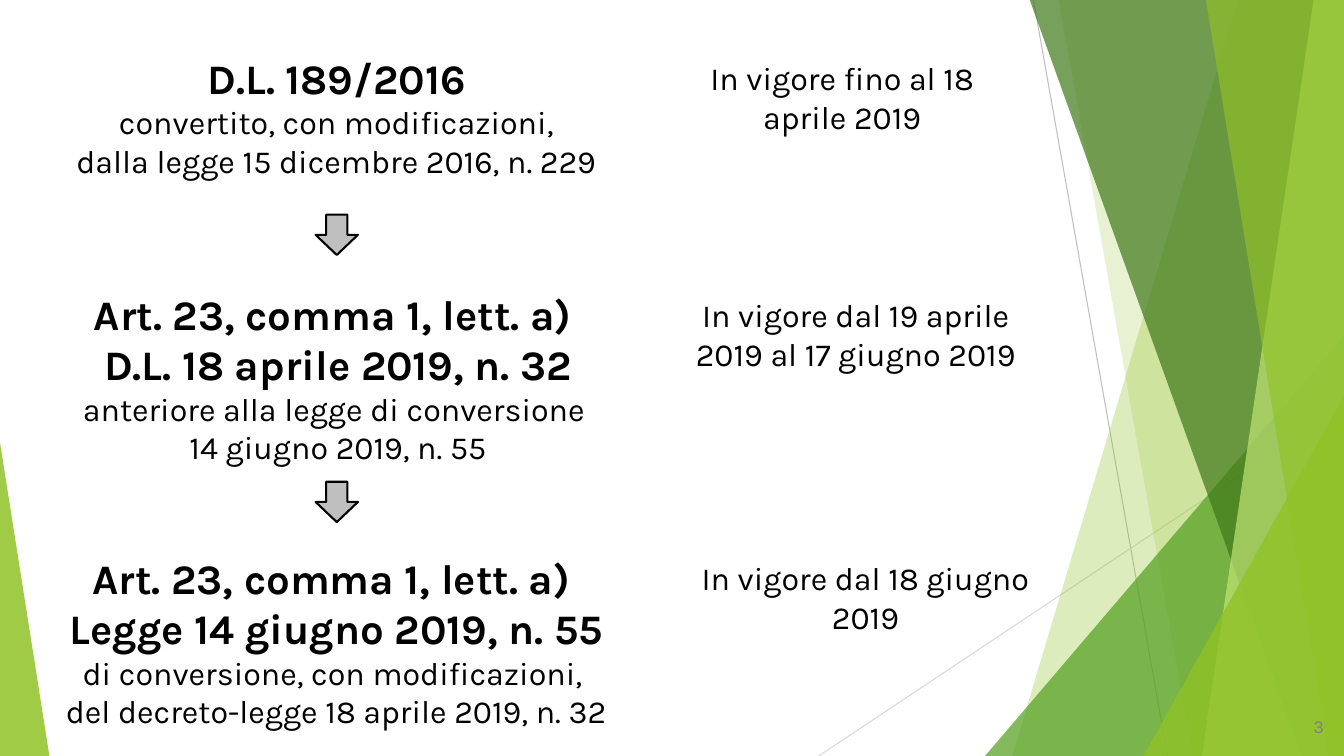
from lxml.etree import SubElement
from pptx import Presentation
from pptx.dml.color import RGBColor
from pptx.enum.shapes import MSO_CONNECTOR, MSO_SHAPE
from pptx.enum.text import MSO_ANCHOR, MSO_AUTO_SIZE, PP_ALIGN
from pptx.oxml.ns import qn
from pptx.util import Emu, Pt

PX = 9144  # one px is a hundredth of an inch
WIDTH, HEIGHT = 1333, 750
FONT = "Karla"
HEADING, BODY, NUMBER = 30, 23, 13

BLACK = RGBColor(0x00, 0x00, 0x00)
GREY = RGBColor(0x80, 0x80, 0x80)
SILVER = RGBColor(0xBF, 0xBF, 0xBF)
PALE_GREY = RGBColor(0xD9, 0xD9, 0xD9)
LIME = RGBColor(0x90, 0xC2, 0x26)
GREEN = RGBColor(0x54, 0xA0, 0x21)
DARK_GREEN = RGBColor(0x3F, 0x78, 0x19)
LIGHT_LIME = RGBColor(0xC0, 0xE4, 0x74)

# start, end, colour
RAYS = [
    ((1025, 0), (1158, 750), SILVER),
    ((1333, 403), (812, 750), PALE_GREY),
]

# Back to front: a band gives its top and bottom left corners and runs to the
# right edge; a wedge gives its left, top, width and apex position.
FACETS = [
    ("band", (1228, 1004), LIME, 30),
    ("band", (1050, 1183), LIME, 20),
    ("wedge", (977, 333, 356, 1), GREEN, 72),
    ("band", (1021, 1291), DARK_GREEN, 70),
    ("band", (1303, 1192), LIGHT_LIME, 70),
    ("band", (1196, 1318), LIME, 65),
    ("wedge", (1134, 393, 199, 1), LIME, 80),
    ("wedge", (0, 439, 49, 0), LIME, 85),
]

# box, heading lines, body lines
LAWS = [
    ((0, 47, 668, 138),
     ["D.L. 189/2016"],
     [" convertito, con modificazioni, ", "dalla legge 15 dicembre 2016, n. 229"]),
    ((0, 281, 671, 188),
     ["Art. 23, comma 1, lett. a) ", "D.L. 18 aprile 2019, n. 32"],
     ["anteriore alla legge di conversione ", "14 giugno 2019, n. 55"]),
    ((0, 543, 668, 188),
     ["Art. 23, comma 1, lett. a) ", "Legge 14 giugno 2019, n. 55"],
     ["di conversione, con modificazioni, ", "del decreto-legge 18 aprile 2019, n. 32"]),
]

PERIODS = [
    ((667, 53, 337, 88), "In vigore fino al 18 aprile 2019"),
    ((667, 288, 364, 88), "In vigore dal 19 aprile 2019 al 17 giugno 2019"),
    ((671, 549, 375, 88), "In vigore dal 18 giugno 2019"),
]

ARROW_LEFT, ARROW_WIDTH, ARROW_HEIGHT = 314, 40, 42
ARROW_TOPS = [212, 477]

PAGE = ((1248, 700, 75, 40), "3")


def emu(*lengths):
    return [Emu(length * PX) for length in lengths]


def add_ray(shapes, start, end, color):
    ray = shapes.add_connector(MSO_CONNECTOR.STRAIGHT, *emu(*start, *end))
    ray.line.color.rgb = color
    ray.line.width = Pt(0.75)
    SubElement(ray._element.spPr, qn("a:effectLst"))


def add_facet(shapes, kind, geometry, color, opacity):
    if kind == "band":
        top_left, bottom_left = geometry
        outline = shapes.build_freeform(top_left, -1, scale=PX)
        outline.add_line_segments(
            [(WIDTH, -1), (WIDTH, HEIGHT), (bottom_left, HEIGHT)], close=True)
        facet = outline.convert_to_shape()
    else:
        left, top, width, apex = geometry
        facet = shapes.add_shape(MSO_SHAPE.ISOSCELES_TRIANGLE,
                                 *emu(left, top, width, HEIGHT - top))
        facet.adjustments[0] = apex
    facet.shadow.inherit = False
    facet.line.fill.background()
    facet.fill.solid()
    facet.fill.fore_color.rgb = color
    tint = facet.fill._xPr.find(qn("a:solidFill"))[0]
    SubElement(tint, qn("a:alpha"), val=str(opacity * 1000))


def add_arrow(shapes, top):
    arrow = shapes.add_shape(MSO_SHAPE.RIGHT_ARROW,
                             *emu(ARROW_LEFT, top, ARROW_WIDTH, ARROW_HEIGHT))
    arrow.rotation = 90
    arrow.shadow.inherit = False
    arrow.fill.solid()
    arrow.fill.fore_color.rgb = SILVER
    arrow.line.color.rgb = BLACK
    arrow.line.width = Pt(1.5)


def add_text(shapes, box, lines, color=BLACK, align=PP_ALIGN.CENTER,
             anchor=MSO_ANCHOR.TOP, fit=MSO_AUTO_SIZE.SHAPE_TO_FIT_TEXT):
    """Write one paragraph for each (text, size, bold) line."""
    frame = shapes.add_textbox(*emu(*box)).text_frame
    frame.word_wrap = True
    frame.auto_size = fit
    frame.vertical_anchor = anchor
    for index, (text, size, bold) in enumerate(lines):
        paragraph = frame.add_paragraph() if index else frame.paragraphs[0]
        paragraph.alignment = align
        run = paragraph.add_run()
        run.text = text
        run.font.name = FONT
        run.font.size = Pt(size)
        run.font.bold = bold
        run.font.color.rgb = color


def main():
    deck = Presentation()
    deck.slide_width, deck.slide_height = emu(WIDTH, HEIGHT)
    shapes = deck.slides.add_slide(deck.slide_layouts[6]).shapes

    for ray in RAYS:
        add_ray(shapes, *ray)
    for facet in FACETS:
        add_facet(shapes, *facet)

    page_box, page_number = PAGE
    add_text(shapes, page_box, [(page_number, NUMBER, False)], color=GREY,
             align=PP_ALIGN.RIGHT, anchor=MSO_ANCHOR.MIDDLE,
             fit=MSO_AUTO_SIZE.NONE)

    for box, headings, details in LAWS:
        add_text(shapes, box, [(text, HEADING, True) for text in headings]
                 + [(text, BODY, False) for text in details])
    for top in ARROW_TOPS:
        add_arrow(shapes, top)
    for box, period in PERIODS:
        add_text(shapes, box, [(period, BODY, False)])

    deck.save("out.pptx")


if __name__ == "__main__":
    main()
